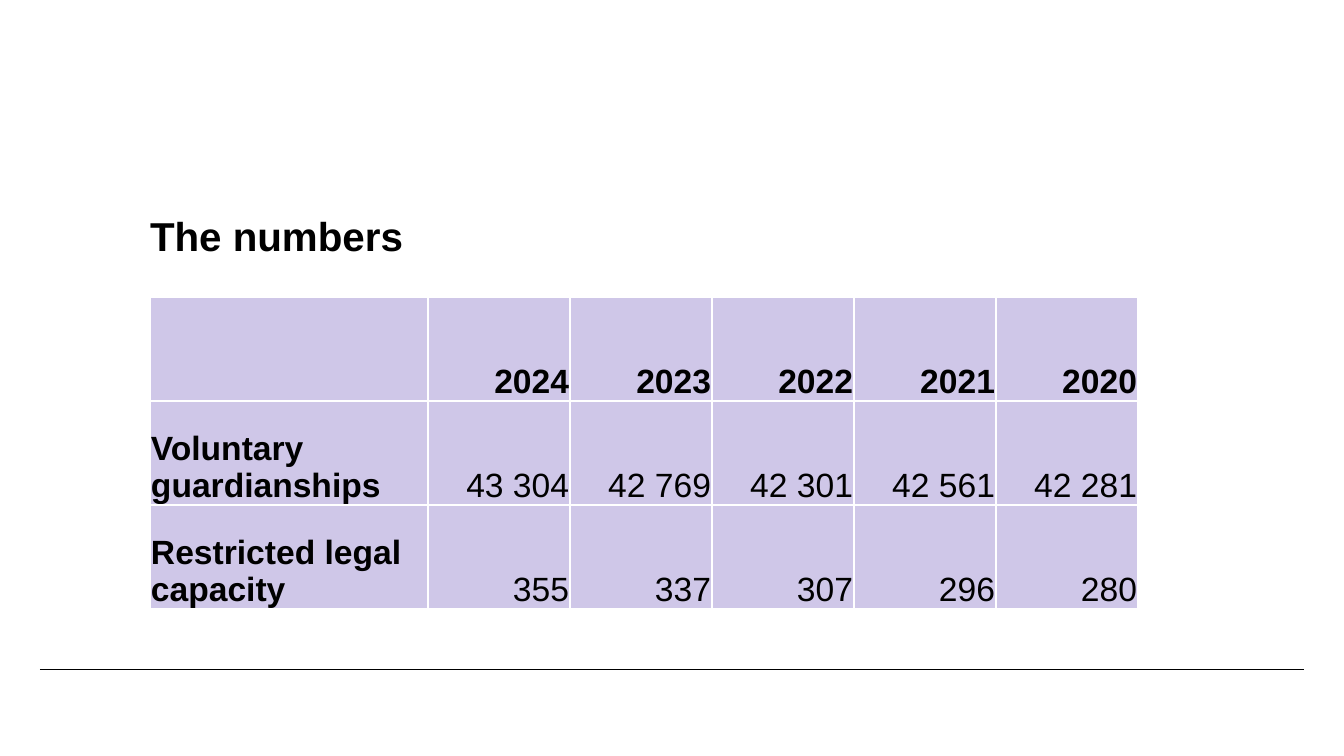
from lxml import etree
from pptx import Presentation
from pptx.dml.color import RGBColor
from pptx.enum.shapes import MSO_CONNECTOR
from pptx.enum.text import MSO_ANCHOR, MSO_AUTO_SIZE, PP_ALIGN
from pptx.oxml.ns import qn
from pptx.util import Emu, Pt

BLACK = RGBColor(0x00, 0x00, 0x00)
WHITE = RGBColor(0xFF, 0xFF, 0xFF)
LILAC = RGBColor(0xCF, 0xC7, 0xE8)

STRAIGHT = MSO_CONNECTOR.STRAIGHT
BOTTOM = MSO_ANCHOR.BOTTOM
NO_AUTOFIT = MSO_AUTO_SIZE.NONE
LEFT, RIGHT = PP_ALIGN.LEFT, PP_ALIGN.RIGHT

EMU_PER_PX = 914400 / 100.8
TITLE_ONLY_LAYOUT = 5

GUARDIANSHIP_ROWS = [
    ["", "2024", "2023", "2022", "2021", "2020"],
    ["Voluntary guardianships", "43 304", "42 769", "42 301", "42 561", "42 281"],
    ["Restricted legal capacity", "355", "337", "307", "296", "280"],
]


def px(length):
    return Emu(round(length * EMU_PER_PX))


class SlideBuilder:
    font_name = "Arial"

    def __init__(self, presentation):
        layout = presentation.slide_layouts[TITLE_ONLY_LAYOUT]
        self.slide = presentation.slides.add_slide(layout)

    def add_run(self, paragraph, text, size, bold):
        run = paragraph.add_run()
        run.text = text
        run.font.name = self.font_name
        run.font.size = Pt(size)
        run.font.bold = bold
        run.font.color.rgb = BLACK

    def title(self, text, left, top, width, height):
        shape = self.slide.shapes.title
        shape.left, shape.top = px(left), px(top)
        shape.width, shape.height = px(width), px(height)
        frame = shape.text_frame
        frame.auto_size = NO_AUTOFIT
        frame.word_wrap = True
        frame.vertical_anchor = BOTTOM
        frame.margin_left = frame.margin_right = 0
        frame.margin_top = frame.margin_bottom = 0
        paragraph = frame.paragraphs[0]
        paragraph.alignment = LEFT
        paragraph.line_spacing = Pt(33.6)
        self.add_run(paragraph, text, 28.8, True)

    def rule(self, left, right, y):
        line = self.slide.shapes.add_connector(
            STRAIGHT, px(left), px(y), px(right), px(y))
        line.line.color.rgb = BLACK
        line.line.width = Pt(0.5)
        etree.SubElement(line._element.spPr, qn("a:effectLst"))

    def cell_borders(self, cell):
        properties = cell._tc.get_or_add_tcPr()
        for side in ("a:lnL", "a:lnR", "a:lnT", "a:lnB"):
            border = etree.SubElement(properties, qn(side), w=str(Pt(1)))
            fill = etree.SubElement(border, qn("a:solidFill"))
            etree.SubElement(fill, qn("a:srgbClr"), val=str(WHITE))

    def table(self, rows, left, top, column_widths, row_height):
        table = self.slide.shapes.add_table(
            len(rows), len(column_widths), px(left), px(top),
            px(sum(column_widths)), px(row_height * len(rows))).table
        for column, width in zip(table.columns, column_widths):
            column.width = px(width)
        for row_index, row in enumerate(rows):
            table.rows[row_index].height = px(row_height)
            for column_index, text in enumerate(row):
                cell = table.cell(row_index, column_index)
                self.cell_borders(cell)
                cell.fill.solid()
                cell.fill.fore_color.rgb = LILAC
                cell.vertical_anchor = BOTTOM
                cell.margin_left = cell.margin_right = cell.margin_top = px(1)
                cell.margin_bottom = 0
                if text:
                    is_heading = row_index == 0 or column_index == 0
                    paragraph = cell.text_frame.paragraphs[0]
                    paragraph.alignment = RIGHT if column_index else LEFT
                    self.add_run(paragraph, text, 24, is_heading)


def main():
    presentation = Presentation()
    presentation.slide_width, presentation.slide_height = px(1344), px(756)
    builder = SlideBuilder(presentation)

    # Footer rule
    builder.rule(40, 1304, 669)

    # Heading
    builder.title("The numbers", 150, 40, 1102, 220)

    # Yearly figures
    builder.table(GUARDIANSHIP_ROWS, 150, 297, [278] + [142] * 5, 104)

    presentation.save("out.pptx")


if __name__ == "__main__":
    main()
